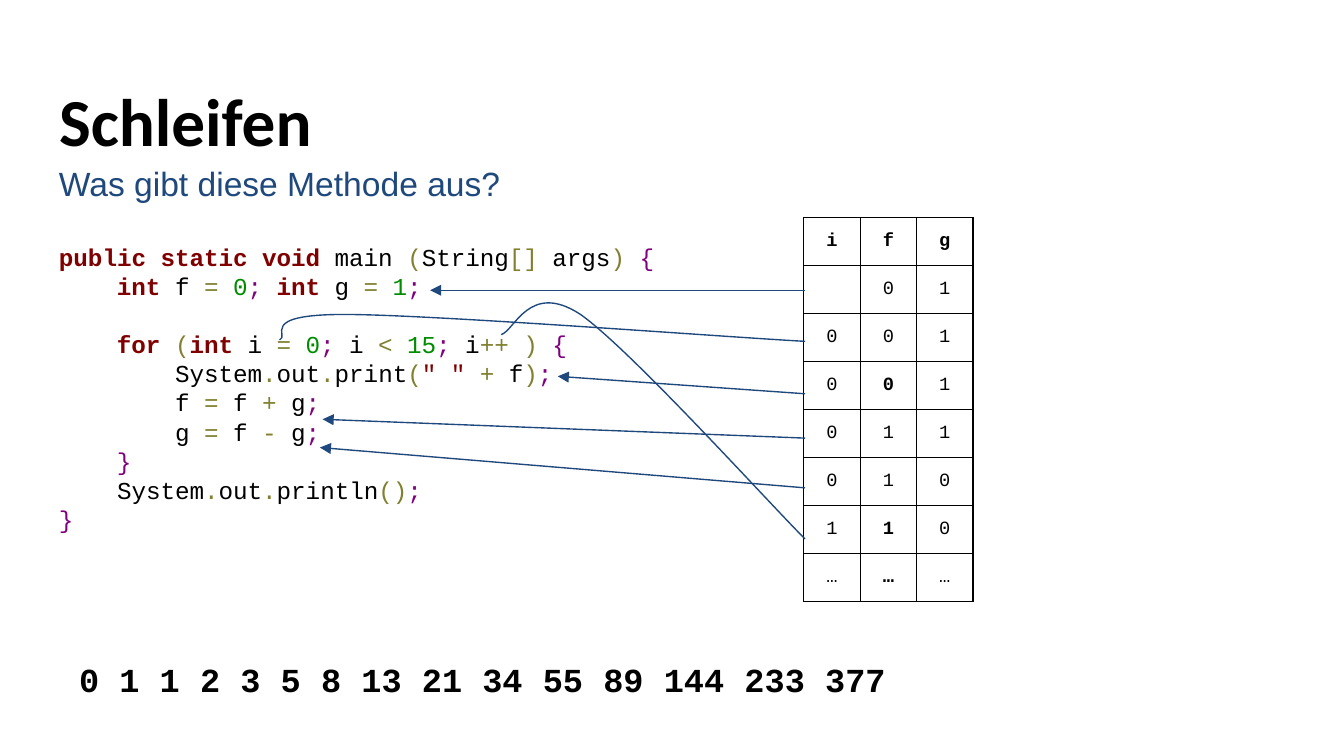
from itertools import groupby

from lxml import etree
from pptx import Presentation
from pptx.dml.color import RGBColor
from pptx.enum import shapes, text
from pptx.oxml import ns
from pptx.util import Inches, Pt

BLACK, WHITE, BLUE = "000000", "FFFFFF", "1F497D"
MONO = "Courier New"

CODE = """public static void main (String[] args) {
    int f = 0; int g = 1;

    for (int i = 0; i < 15; i++ ) { 
        System.out.print(" " + f);
        f = f + g;
        g = f - g;
    }
    System.out.println();
}"""
KEYWORDS = {"public", "static", "void", "int", "for"}
SYNTAX = {"word": BLACK, "space": BLACK, "keyword": "800000", "quote": "800000",
          "number": "008C00", "operator": "808030", "separator": "800080"}

TRACE = ["i f g", " 0 1", "0 0 1", "0 0 1", "0 1 1", "0 1 0", "1 1 0", "… … …"]
BOLD_CELLS = {(0, 0), (0, 1), (0, 2), (3, 1), (6, 1), (7, 1)}

# Notes start at the table's left edge: start height, then end or segments
NOTE_X = 5.99
ARROWS = [(2.16, (3.2, 2.16)), (2.93, (4.15, 2.8)),
          (3.26, (2.4, 3.12)), (3.63, (2.38, 3.33))]
CURVES = [
    (2.54, [((5.42, 2.51), (3.21, 2.34), (2.56, 2.34)),
            ((1.91, 2.34), (2.16, 2.5), (2.08, 2.53))]),
    (4.01, [((5.71, 3.73), (4.69, 2.6), (4.32, 2.34)),
            ((3.94, 2.09), (3.83, 2.46), (3.73, 2.49))]),
]


def rgb(hex_color):
    return RGBColor.from_string(hex_color)


def sub(parent, tag, **attrs):
    return etree.SubElement(parent, ns.qn(tag), attrs)


def add_run(p, words, size, font, color=BLACK, bold=False):
    r = p.add_run()
    r.text = words
    r.font.size, r.font.name, r.font.bold = Pt(size), font, bold
    r.font.color.rgb = rgb(color)


def prepare_frame(sp):
    """Set even insets and top-left text, and return the first paragraph."""
    tf = sp.text_frame
    tf.word_wrap, tf.auto_size = True, text.MSO_AUTO_SIZE.NONE
    tf.vertical_anchor = text.MSO_ANCHOR.TOP
    tf.margin_left = tf.margin_right = Inches(0.1)
    tf.margin_top = tf.margin_bottom = Inches(0.1)
    p = tf.paragraphs[0]
    p.alignment = text.PP_ALIGN.LEFT
    return p


def add_text_box(s, box):
    return prepare_frame(s.shapes.add_textbox(*map(Inches, box)))


def add_title(s, box, words):
    sp = s.shapes.title
    sp.left, sp.top, sp.width, sp.height = map(Inches, box)
    add_run(prepare_frame(sp), words, 36, "Calibri", bold=True)


def char_kind(ch):
    if ch.isalpha():
        return "word"
    if ch.isdigit():
        return "number"
    if ch == " ":
        return "space"
    if ch == '"':
        return "quote"
    return "separator" if ch in ";{}" else "operator"


def add_code(s, box):
    p = add_text_box(s, box)
    for n, line in enumerate(CODE.splitlines()):
        if n:
            p.add_line_break()
            # the break takes the code's font, so a blank line keeps its height
            sub(sub(p._p[-1], "a:rPr", sz="1300"), "a:latin", typeface=MONO)
        for kind, chars in groupby(line, char_kind):
            token = "".join(chars)
            if token in KEYWORDS:
                kind = "keyword"
            add_run(p, token, 13, MONO, SYNTAX[kind], kind == "keyword")


def add_border(cell):
    tc_pr = cell._tc.get_or_add_tcPr()
    for n, side in enumerate(("a:lnL", "a:lnR", "a:lnT", "a:lnB")):
        ln = etree.Element(ns.qn(side), w=str(Pt(0.75)))
        sub(sub(ln, "a:solidFill"), "a:srgbClr", val=BLACK)
        tc_pr.insert(n, ln)


def add_trace_table(s, box):
    rows = [line.split(" ") for line in TRACE]
    frame = s.shapes.add_table(len(rows), 3, *map(Inches, box))
    table = frame.table
    table.first_row = table.horz_banding = False
    for row in table.rows:
        row.height = Inches(0.28)
    frame.height = Inches(box[3])
    for i, row in enumerate(rows):
        for j, value in enumerate(row):
            cell = table.cell(i, j)
            cell.margin_left = cell.margin_right = Inches(0.1)
            cell.margin_top = cell.margin_bottom = Inches(0.1)
            cell.vertical_anchor = text.MSO_ANCHOR.MIDDLE
            cell.fill.solid()
            cell.fill.fore_color.rgb = rgb(WHITE)
            add_border(cell)
            p = cell.text_frame.paragraphs[0]
            p.alignment = text.PP_ALIGN.CENTER
            if value:
                add_run(p, value, 10, MONO, bold=(i, j) in BOLD_CELLS)
            else:
                end = sub(p._p, "a:endParaRPr", sz="1000")
                sub(end, "a:latin", typeface=MONO)


def style_line(sp):
    sp.line.color.rgb = rgb(BLUE)
    sp.line.width = Pt(0.75)


def add_arrow(s, start, end):
    line = s.shapes.add_connector(shapes.MSO_CONNECTOR.STRAIGHT,
                                  *map(Inches, start + end))
    style_line(line)
    sub(line.line._get_or_add_ln(), "a:tailEnd", type="triangle")
    sub(line._element.spPr, "a:effectLst")


def add_curve(s, start, segments):
    """Draw Bezier segments, each given as two control points and an end."""
    builder = s.shapes.build_freeform(*map(Inches, start))
    builder.add_line_segments([tuple(map(Inches, seg[-1])) for seg in segments],
                              close=False)
    sp = builder.convert_to_shape()
    for line_to, seg in zip(list(sp._element.iter(ns.qn("a:lnTo"))), segments):
        curve = etree.Element(ns.qn("a:cubicBezTo"))
        for x, y in seg:
            sub(curve, "a:pt", x=str(Inches(x) - sp.left), y=str(Inches(y) - sp.top))
        line_to.getparent().replace(line_to, curve)
    sp.fill.background()
    sp.shadow.inherit = False
    style_line(sp)


def add_notes_to_code(s):
    """Link trace rows to the statements that produced them."""
    for y, end in ARROWS:
        add_arrow(s, (NOTE_X, y), end)
    for y, segments in CURVES:
        add_curve(s, (NOTE_X, y), segments)


def main():
    prs = Presentation()
    prs.slide_width = Inches(10)
    prs.slide_height = prs.slide_width * 9 // 16
    s = prs.slides.add_slide(prs.slide_layouts[5])
    add_title(s, (0.34, 0.49, 9.32, 0.63), "Schleifen")
    add_code(s, (0.34, 1.7, 4.72, 2.34))
    add_run(add_text_box(s, (0.34, 1.11, 9.32, 0.43)),
            "Was gibt diese Methode aus?", 18, "Arial", BLUE)
    add_trace_table(s, (5.98, 1.62, 1.26, 2.93))
    add_notes_to_code(s)
    add_run(add_text_box(s, (0.34, 4.8, 6.58, 0.52)),
            " 0 1 1 2 3 5 8 13 21 34 55 89 144 233 377", 18, MONO, bold=True)
    prs.save("out.pptx")


if __name__ == "__main__":
    main()
